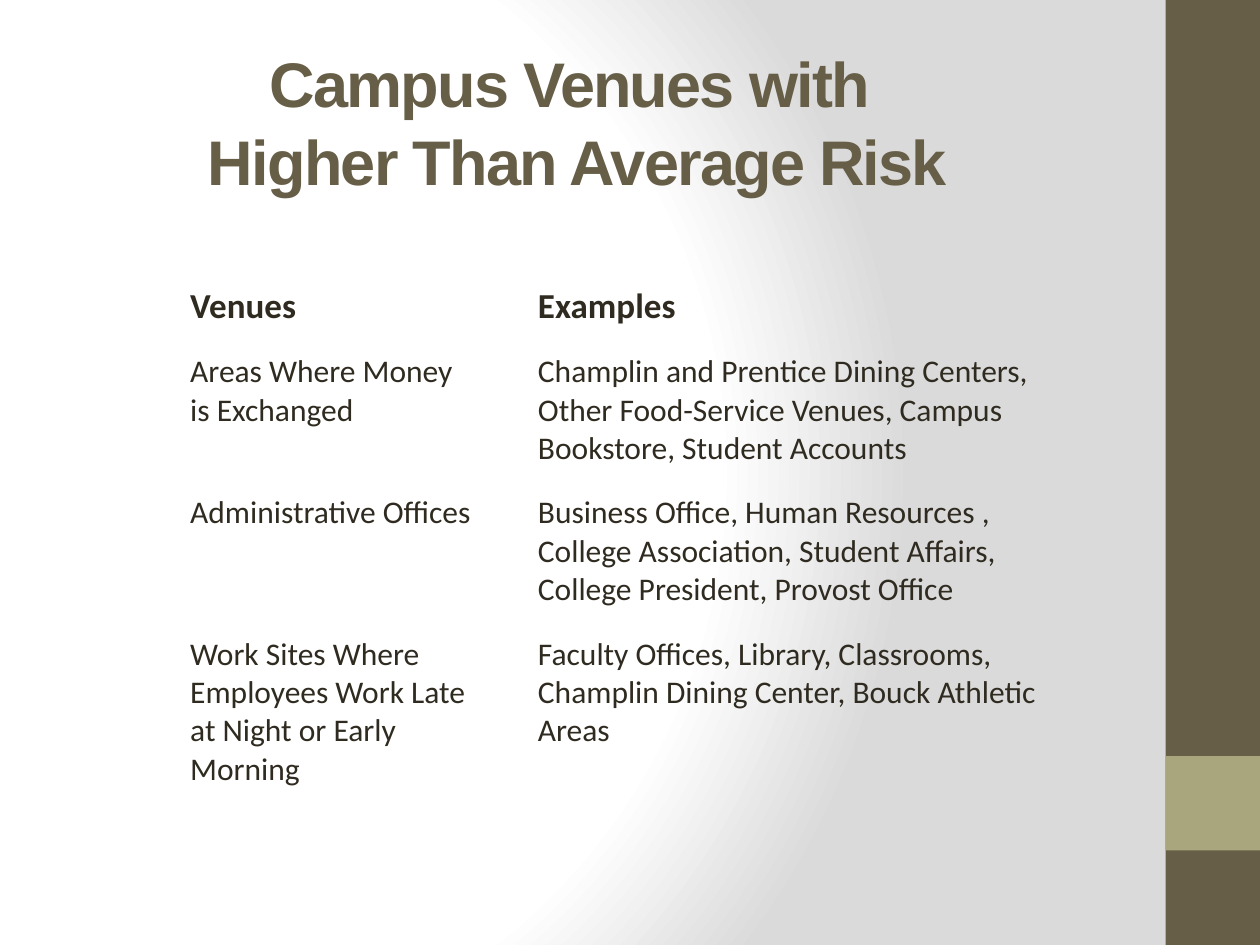
from dataclasses import dataclass

from pptx import Presentation
from pptx.dml.color import RGBColor
from pptx.enum.shapes import MSO_SHAPE
from pptx.enum.text import MSO_ANCHOR, MSO_AUTO_SIZE, PP_ALIGN
from pptx.oxml import parse_xml
from pptx.oxml.ns import qn
from pptx.util import Inches, Pt

RECTANGLE = MSO_SHAPE.RECTANGLE
MIDDLE, TOP = MSO_ANCHOR.MIDDLE, MSO_ANCHOR.TOP
CENTER = PP_ALIGN.CENTER
NO_AUTOFIT = MSO_AUTO_SIZE.NONE
TITLE_ONLY_LAYOUT = 5
PLAIN_TABLE_STYLE = "{2D5ABB26-0587-4C30-8999-92F81FD0307C}"


@dataclass(frozen=True)
class Theme:
    band: str = "675E47"
    accent: str = "A9A57C"
    text: str = "2F2B20"
    light: str = "FFFFFF"
    shade: str = "DADADA"
    title_font: str = "Arial"
    body_font: str = "Calibri"
    title_size: int = 36
    header_size: int = 20
    body_size: int = 18


TITLE = "Campus Venues with \vHigher Than Average Risk"
HEADERS = ["Venues", "Examples"]
VENUES = [
    ("Areas Where Money is Exchanged",
     "Champlin and Prentice Dining Centers,\n"
     "Other Food-Service Venues, Campus\n"
     "Bookstore, Student Accounts"),
    ("Administrative Offices",
     "Business Office, Human Resources ,\n"
     "College Association, Student Affairs,\n"
     "College President, Provost Office"),
    ("Work Sites Where Employees Work Late at Night or Early Morning",
     "Faculty Offices, Library, Classrooms,\n"
     "Champlin Dining Center, Bouck Athletic\n"
     "Areas"),
]
COLUMN_WIDTHS = [2.48, 4.71]
ROW_HEIGHTS = [0.54, 1.12, 1.12, 1.42]
EXAMPLE_INDENT = 0.28
CELL_MARGIN = 0.1


def apply_format(target, values):
    for name, value in values.items():
        setattr(target, name, value)


class SlideBuilder:
    def __init__(self, slide, theme):
        self.slide = slide
        self.theme = theme

    def format_text(self, text_frame, font, size, color, bold):
        for paragraph in text_frame.paragraphs:
            for run in paragraph.runs:
                apply_format(run.font, {"name": font, "size": Pt(size), "bold": bold})
                run.font.color.rgb = RGBColor.from_string(color)

    def background(self):
        """Fill the slide with a circular gradient, which python-pptx cannot set."""
        stops = [(0, self.theme.light), (75, self.theme.light), (100, self.theme.shade)]
        stop_xml = "".join(
            f'<a:gs pos="{position * 1000}"><a:srgbClr val="{color}"/></a:gs>'
            for position, color in stops)
        background = parse_xml(
            '<p:bg xmlns:p="http://schemas.openxmlformats.org/presentationml/2006/main" '
            'xmlns:a="http://schemas.openxmlformats.org/drawingml/2006/main">'
            f'<p:bgPr><a:gradFill rotWithShape="1"><a:gsLst>{stop_xml}</a:gsLst>'
            '<a:path path="circle">'
            '<a:fillToRect l="20000" t="50000" r="100000" b="50000"/></a:path>'
            '</a:gradFill><a:effectLst/></p:bgPr></p:bg>')
        self.slide.element.cSld.insert(0, background)

    def rectangle(self, left, top, width, height, color):
        shape = self.slide.shapes.add_shape(
            RECTANGLE, Inches(left), Inches(top), Inches(width), Inches(height))
        shape.shadow.inherit = False
        shape.fill.solid()
        shape.fill.fore_color.rgb = RGBColor.from_string(color)
        shape.line.fill.background()

    def title(self, text, left, top, width, height):
        title = self.slide.shapes.title
        apply_format(title, {"left": Inches(left), "top": Inches(top),
                             "width": Inches(width), "height": Inches(height)})
        text_frame = title.text_frame
        text_frame.text = text
        apply_format(text_frame, {"vertical_anchor": MIDDLE, "word_wrap": True,
                                  "auto_size": NO_AUTOFIT})
        apply_format(text_frame.paragraphs[0], {"alignment": CENTER, "line_spacing": 1.03})
        self.format_text(text_frame, self.theme.title_font, self.theme.title_size,
                         self.theme.band, True)
        for run in text_frame.paragraphs[0].runs:
            run.font._element.set("spc", "-100")

    def cell(self, cell, text, is_header, indent):
        cell.text = text
        cell.fill.background()
        margins = dict.fromkeys(
            ["margin_left", "margin_right", "margin_top", "margin_bottom"],
            Inches(CELL_MARGIN))
        margins["margin_left"] = Inches(CELL_MARGIN + indent)
        apply_format(cell, {**margins, "vertical_anchor": MIDDLE if is_header else TOP})
        size = self.theme.header_size if is_header else self.theme.body_size
        self.format_text(cell.text_frame, self.theme.body_font, size,
                         self.theme.text, is_header)

    def table(self, rows, left, top):
        frame = self.slide.shapes.add_table(
            len(rows), len(COLUMN_WIDTHS), Inches(left), Inches(top),
            Inches(sum(COLUMN_WIDTHS)), Inches(sum(ROW_HEIGHTS)))
        table = frame.table
        apply_format(table, {"first_row": False, "horz_banding": False})
        table._tbl.tblPr.find(qn("a:tableStyleId")).text = PLAIN_TABLE_STYLE
        for column, width in zip(table.columns, COLUMN_WIDTHS):
            column.width = Inches(width)
        for row, height in zip(table.rows, ROW_HEIGHTS):
            row.height = Inches(height)
        for row_index, texts in enumerate(rows):
            for column_index, text in enumerate(texts):
                self.cell(table.cell(row_index, column_index), text,
                          row_index == 0, EXAMPLE_INDENT * column_index)


def main():
    presentation = Presentation()
    apply_format(presentation, {"slide_width": Inches(10), "slide_height": Inches(7.5)})
    slide = presentation.slides.add_slide(presentation.slide_layouts[TITLE_ONLY_LAYOUT])
    theme = Theme()
    builder = SlideBuilder(slide, theme)
    builder.background()
    builder.rectangle(9.25, 0, 0.75, 7.5, theme.band)
    builder.rectangle(9.25, 6, 0.75, 0.75, theme.accent)
    builder.title(TITLE, 0.42, 0.33, 8.33, 1.25)
    builder.table([HEADERS, *VENUES], 1.41, 2.16)
    presentation.save("out.pptx")


if __name__ == "__main__":
    main()
